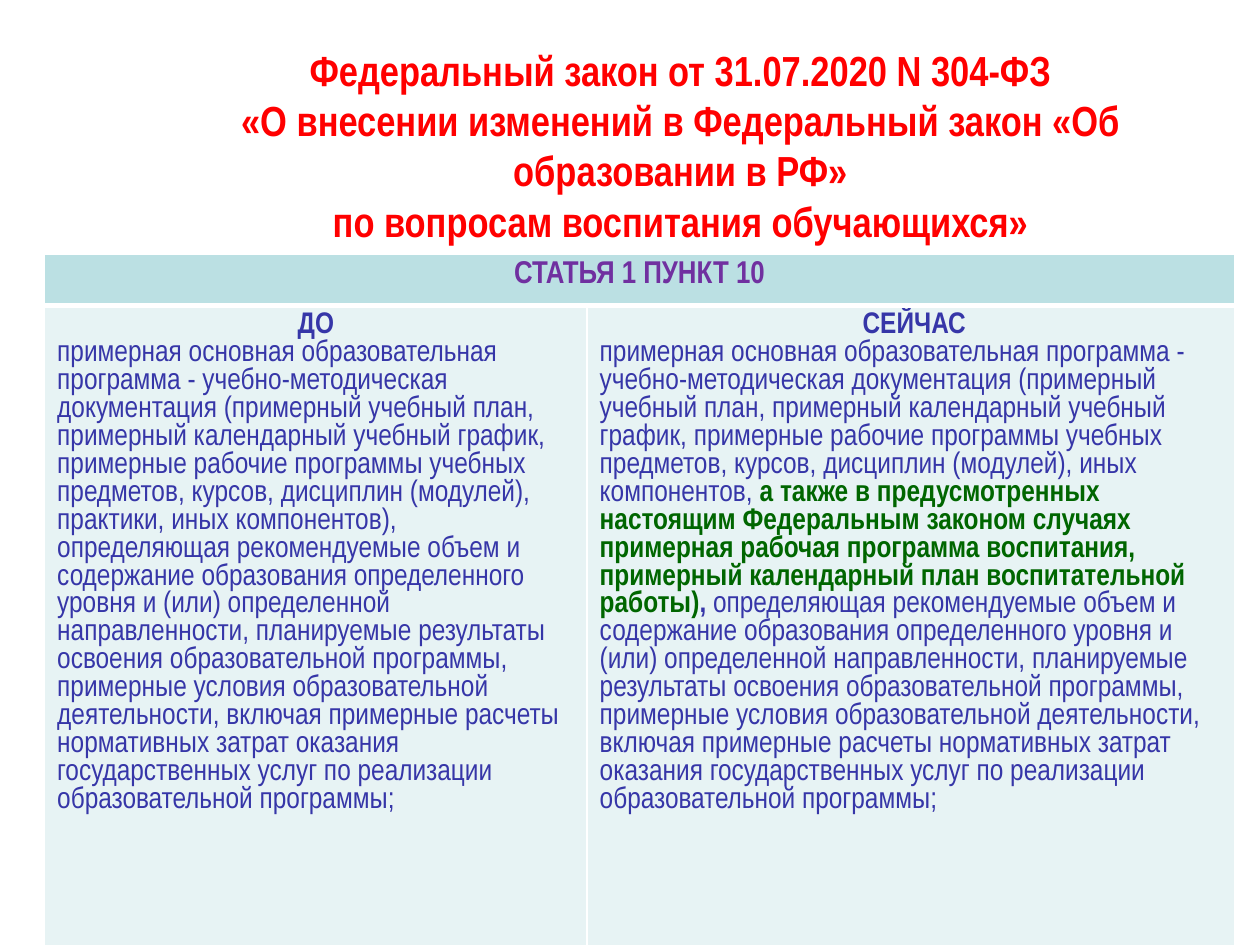
from lxml.etree import SubElement
from pptx import Presentation
from pptx.dml.color import RGBColor
from pptx.enum.text import MSO_ANCHOR, PP_ALIGN
from pptx.oxml.ns import qn
from pptx.util import Pt

RED, PURPLE, BLUE, GREEN = "FF0000", "7030A0", "3636A8", "006600"
HEADER_FILL, BODY_FILL, WHITE = "BBE0E3", "E7F3F4", "FFFFFF"


def color(hex_value):
    return RGBColor.from_string(hex_value)


class SlideBuilder:
    font_name = "Arial Narrow"

    def __init__(self, slide):
        self.slide = slide

    def add_run(self, paragraph, text, size, tint, bold=False):
        run = paragraph.add_run()
        run.text = text
        style = {"name": self.font_name, "size": Pt(size), "bold": bold}
        for attribute, value in style.items():
            setattr(run.font, attribute, value)
        run.font.color.rgb = color(tint)

    def add_title(self, lines, left, top, width, height, size, tint):
        box = self.slide.shapes.add_textbox(Pt(left), Pt(top), Pt(width), Pt(height))
        frame = box.text_frame
        for attribute, value in {"word_wrap": True, "vertical_anchor": MSO_ANCHOR.TOP}.items():
            setattr(frame, attribute, value)
        paragraph = frame.paragraphs[0]
        paragraph.alignment = PP_ALIGN.CENTER
        for number, line in enumerate(lines):
            if number:
                paragraph.add_line_break()
            self.add_run(paragraph, line, size, tint, bold=True)

    def add_table(self, left, top, height, column_widths, row_heights):
        frame = self.slide.shapes.add_table(
            len(row_heights), len(column_widths),
            Pt(left), Pt(top), Pt(sum(column_widths)), Pt(height))
        table = frame.table
        table.horz_banding = False
        for column, width in zip(table.columns, column_widths):
            column.width = Pt(width)
        for row, row_height in zip(table.rows, row_heights):
            row.height = Pt(row_height)
        frame.height = Pt(height)
        return table

    def fill_cell(self, cell, fill, paragraphs, size, bottom=1):
        self.add_borders(cell, {"lnL": 1, "lnR": 1, "lnT": 1, "lnB": bottom})
        cell.fill.solid()
        cell.fill.fore_color.rgb = color(fill)
        frame = cell.text_frame
        for number, (alignment, runs) in enumerate(paragraphs):
            paragraph = frame.add_paragraph() if number else frame.paragraphs[0]
            paragraph.alignment = alignment
            for text, tint, bold in runs:
                self.add_run(paragraph, text, size, tint, bold)

    def add_borders(self, cell, widths):
        properties = cell._tc.get_or_add_tcPr()
        for side, width in widths.items():
            line = SubElement(properties, qn(f"a:{side}"), w=str(Pt(width)))
            fill = SubElement(line, qn("a:solidFill"))
            SubElement(fill, qn("a:srgbClr"), val=WHITE)


# Wording shared by both versions of the law
OPENING = (
    "примерная основная образовательная программа - учебно-методическая документация "
    "(примерный учебный план, примерный календарный учебный график, примерные рабочие "
    "программы учебных предметов, курсов, дисциплин (модулей), ")
ENDING = (
    " определяющая рекомендуемые объем и содержание образования определенного уровня "
    "и (или) определенной направленности, планируемые результаты освоения образовательной "
    "программы, примерные условия образовательной деятельности, включая примерные расчеты "
    "нормативных затрат оказания государственных услуг по реализации образовательной программы;")
ADDITION = (
    "а также в предусмотренных настоящим Федеральным законом случаях примерная рабочая "
    "программа воспитания, примерный календарный план воспитательной работы)")

VERSIONS = [
    ("ДО", [(OPENING + "практики, иных компонентов)," + ENDING, BLUE, False)]),
    (" СЕЙЧАС", [
        (OPENING + "иных компонентов, ", BLUE, False),
        (ADDITION, GREEN, True),
        (",", BLUE, True),
        (ENDING, BLUE, False),
    ]),
]


def main():
    presentation = Presentation()
    presentation.slide_width, presentation.slide_height = Pt(720), Pt(540)
    builder = SlideBuilder(presentation.slides.add_slide(presentation.slide_layouts[6]))

    # Title
    builder.add_title(
        ["Федеральный закон от 31.07.2020 N 304-ФЗ",
         "«О внесении изменений в Федеральный закон «Об образовании в РФ»",
         "по вопросам воспитания обучающихся»"],
        93.6, 21.6, 590.4, 90, 24, RED)

    # Comparison table: heading across both columns, then the two versions
    table = builder.add_table(25.5, 145.5, 404, [310, 370], [29.2, 29.2])
    heading = table.cell(0, 0)
    heading.merge(table.cell(0, 1))
    builder.fill_cell(
        heading, HEADER_FILL,
        [(PP_ALIGN.CENTER, [("СТАТЬЯ 1 ПУНКТ 10", PURPLE, True)])], 18, bottom=3)
    for column, (caption, wording) in enumerate(VERSIONS):
        builder.fill_cell(
            table.cell(1, column), BODY_FILL,
            [(PP_ALIGN.CENTER, [(caption, BLUE, True)]), (PP_ALIGN.LEFT, wording)], 17)

    presentation.save("out.pptx")


if __name__ == "__main__":
    main()
